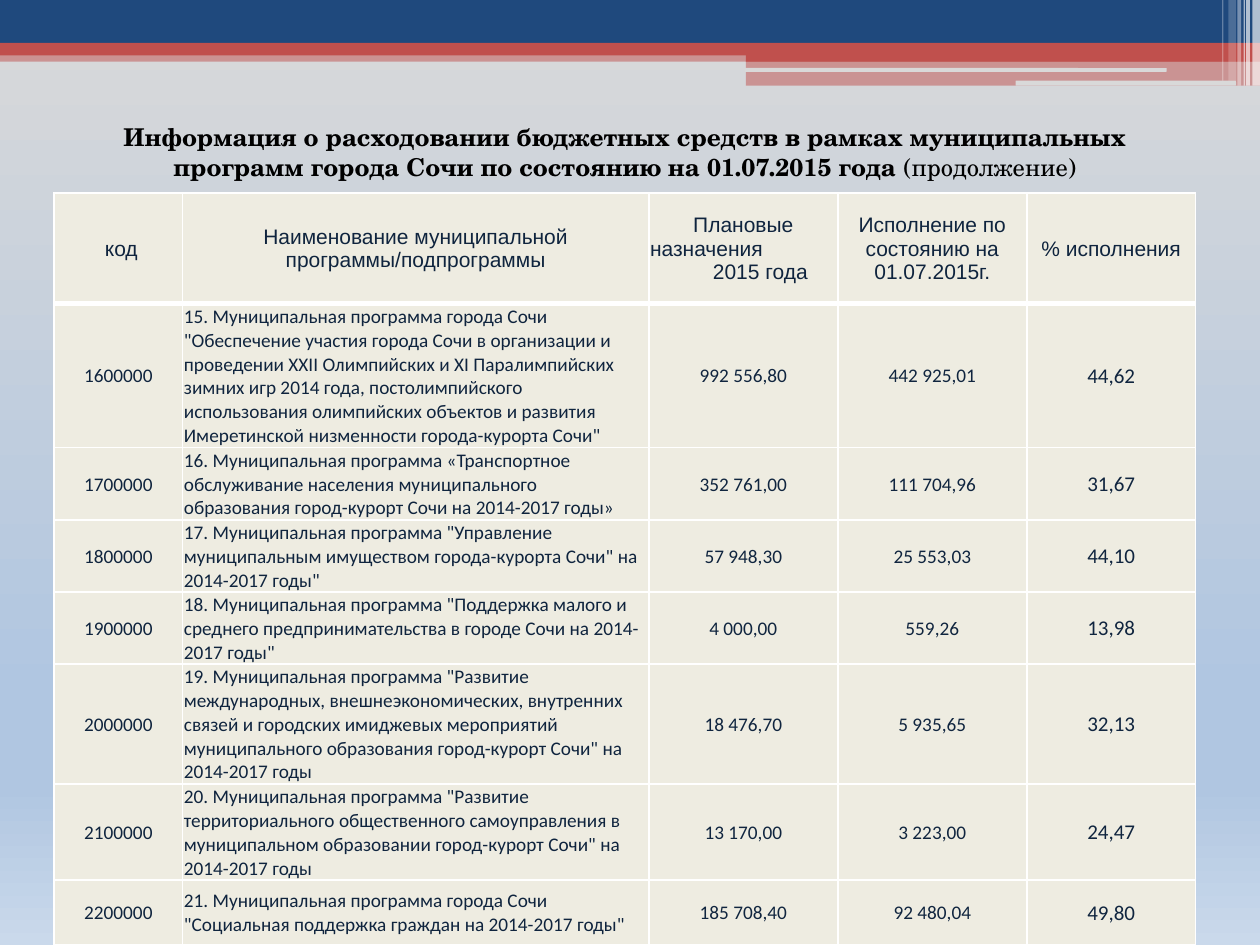
from lxml import etree
from pptx import Presentation, util as u
from pptx.dml.color import RGBColor
from pptx.enum import shapes as sh, text as tx
from pptx.oxml.ns import qn

COLORS = {
    "navy": "1F497D", "red": "C0504D", "white": "FFFFFF", "black": "000000",
    "cream": "EEECE1", "ink": "0F243E", "blue": "10253F", "gray": "D9D9D9",
    "sky": "B0C6E1", "pale": "CAD9EB",
}
SKY = [(0, "gray"), (74, "sky"), (83, "sky"), (100, "pale")]
LEFT, MID = tx.PP_ALIGN.LEFT, tx.PP_ALIGN.CENTER
RECT, ROUND = sh.MSO_SHAPE.RECTANGLE, sh.MSO_SHAPE.ROUNDED_RECTANGLE

HEAD = [
    [" код"],
    ["Наименование муниципальной программы/подпрограммы"],
    ["Плановые", "назначения", "2015 года"],
    ["Исполнение по состоянию на 01.07.2015г."],
    ["% исполнения"],
]
ROWS = [
    ("1600000", '15. Муниципальная программа города Сочи "Обеспечение участия города Сочи в организации и '
     'проведении XXII Олимпийских и XI Паралимпийских зимних игр 2014 года, постолимпийского использования '
     'олимпийских объектов и развития Имеретинской низменности города-курорта Сочи"',
     "992 556,80", "442 925,01", "44,62"),
    ("1700000", "16. Муниципальная программа «Транспортное обслуживание населения муниципального "
     "образования город-курорт Сочи на 2014-2017 годы»", "352 761,00", "111 704,96", "31,67"),
    ("1800000", '17. Муниципальная программа "Управление муниципальным имуществом города-курорта Сочи" '
     'на 2014-2017 годы"', "57 948,30", "25 553,03", "44,10"),
    ("1900000", '18. Муниципальная программа "Поддержка малого и среднего предпринимательства '
     'в городе Сочи на 2014-2017 годы"', "4 000,00", "559,26", "13,98"),
    ("2000000", '19. Муниципальная программа "Развитие международных, внешнеэкономических, внутренних связей '
     'и городских имиджевых мероприятий муниципального образования город-курорт Сочи" на 2014-2017 годы',
     "18 476,70", "5 935,65", "32,13"),
    ("2100000", '20. Муниципальная программа "Развитие территориального общественного самоуправления '
     'в муниципальном образовании город-курорт Сочи" на 2014-2017 годы', "13 170,00", "3 223,00", "24,47"),
    ("2200000", '21. Муниципальная программа города Сочи "Социальная поддержка граждан на 2014-2017 годы"',
     "185 708,40", "92 480,04", "49,80"),
]


def rgb(name):
    return RGBColor.from_string(COLORS[name])


class Deck:
    """Style and current slide; lengths are in grid units, 100 columns by 75 rows."""

    def __init__(self):
        self.prs = Presentation()
        self.prs.slide_width, self.prs.slide_height = u.Inches(10), u.Inches(7.5)
        self.unit = self.prs.slide_width / 100
        self.slide = self.prs.slides.add_slide(self.prs.slide_layouts[5])

    def size(self, *vals):
        return [round(v * self.unit) for v in vals]

    def back(self):
        fill = self.slide.background.fill
        fill.gradient()
        fill.gradient_angle = 270
        stops = self.slide._element.find(".//" + qn("a:gsLst"))
        for old in list(stops):
            stops.remove(old)
        for pos, hue in SKY:
            stop = etree.SubElement(stops, qn("a:gs"), pos=str(pos * 1000))
            etree.SubElement(stop, qn("a:srgbClr"), val=COLORS[hue])

    def bar(self, box, color, alpha=100, kind=RECT):
        bar = self.slide.shapes.add_shape(kind, *self.size(*box))
        bar.shadow.inherit = False
        bar.line.fill.background()
        bar.fill.solid()
        bar.fill.fore_color.rgb = rgb(color)
        if alpha < 100:
            tint = bar._element.spPr.find(".//" + qn("a:srgbClr"))
            etree.SubElement(tint, qn("a:alpha"), val=str(alpha * 1000))

    def font(self, para, name, size, color, align=MID):
        para.alignment = align
        para.font.name, para.font.size = name, u.Pt(size)
        para.font.color.rgb = rgb(color)

    def title(self, box, bold, plain):
        head = self.slide.shapes.title
        head.left, head.top, head.width, head.height = self.size(*box)
        frame = head.text_frame
        frame.word_wrap, frame.vertical_anchor = True, tx.MSO_ANCHOR.TOP
        frame.auto_size = tx.MSO_AUTO_SIZE.SHAPE_TO_FIT_TEXT
        para = frame.paragraphs[0]
        self.font(para, "TeX Gyre Schola", 14, "black")
        for words, heavy in ((bold, True), (plain, False)):
            run = para.add_run()
            run.text, run.font.bold = words, heavy

    def cell(self, cell, lines, name, size, color, align=MID, base=1):
        cell.text = "\n".join(lines)
        cell.vertical_anchor = tx.MSO_ANCHOR.MIDDLE
        cell.margin_left = cell.margin_top = cell.margin_right = u.Inches(0.01)
        cell.margin_bottom = 0
        for para in cell.text_frame.paragraphs:
            self.font(para, name, size, color, align)
        # Borders come before the fill
        props = cell._tc.get_or_add_tcPr()
        for side in "LRTB":
            width = base if side == "B" else 1
            line = etree.SubElement(props, qn("a:ln" + side), w=str(u.Pt(width)))
            paint = etree.SubElement(line, qn("a:solidFill"))
            etree.SubElement(paint, qn("a:srgbClr"), val=COLORS["white"])
        cell.fill.solid()
        cell.fill.fore_color.rgb = rgb("cream")

    def table(self, left, top, cols, rows):
        box = self.size(left, top, sum(cols), sum(rows))
        grid = self.slide.shapes.add_table(len(rows), len(cols), *box).table
        grid.first_row = grid.horz_banding = False
        for col, wide in zip(grid.columns, self.size(*cols)):
            col.width = wide
        for row, tall in zip(grid.rows, self.size(*rows)):
            row.height = tall
        return grid

    def save(self):
        self.prs.save("out.pptx")


def main():
    deck = Deck()
    deck.back()

    # Header bands
    deck.bar((0, 4, 100, 0.9), "red", 50)
    deck.bar((0, 0, 100, 3.4), "navy")
    deck.bar((0, 3.4, 100, 1), "red")
    deck.bar((59.2, 3.9, 40.8, 1), "red")
    deck.bar((59.2, 4.8, 40.8, 2), "red", 50)
    deck.bar((59.1, 5.4, 33.5, 0.3), "gray", kind=ROUND)
    deck.bar((80.6, 6.4, 17.5, 0.4), "gray", kind=ROUND)

    # Light stripes at the right edge
    for left, wide, tall, alpha in (
        (99.4, 0.6, 6.8, 65), (98.9, 0.3, 6.8, 65), (98.7, 0.1, 6.8, 60),
        (98.2, 0.3, 6.8, 40), (97.5, 0.6, 6.4, 20), (97, 0.1, 6.4, 30),
    ):
        deck.bar((left, 0, wide, tall), "white", alpha)

    # Budget table: each row is as tall as its lines of text
    grid = deck.table(4.3, 15.3, (10.2, 37, 15, 15, 13.4),
                      (8.8, 11.43, 5.73, 5.73, 5.73, 9.53, 7.62, 5.1))
    for col, lines in enumerate(HEAD):
        deck.cell(grid.cell(0, col), lines, "Arial", 12, "ink", base=3)
    plan = grid.cell(0, 2).text_frame.paragraphs
    plan[1].alignment = LEFT
    plan[2]._p.get_or_add_pPr().set("marL", str(u.Inches(0.27)))

    looks = [(11, "ink", MID), (11, "ink", LEFT), (11, "blue", MID), (11, "blue", MID), (12, "blue", MID)]
    for row, vals in enumerate(ROWS, 1):
        for col, (val, look) in enumerate(zip(vals, looks)):
            deck.cell(grid.cell(row, col), [val], "Calibri", *look)

    # Title
    deck.title((5.1, 9.2, 89, 5.7),
               "Информация о расходовании бюджетных средств в рамках муниципальных "
               "программ города Сочи по состоянию на 01.07.2015 года ", "(продолжение)")
    deck.save()


if __name__ == "__main__":
    main()
